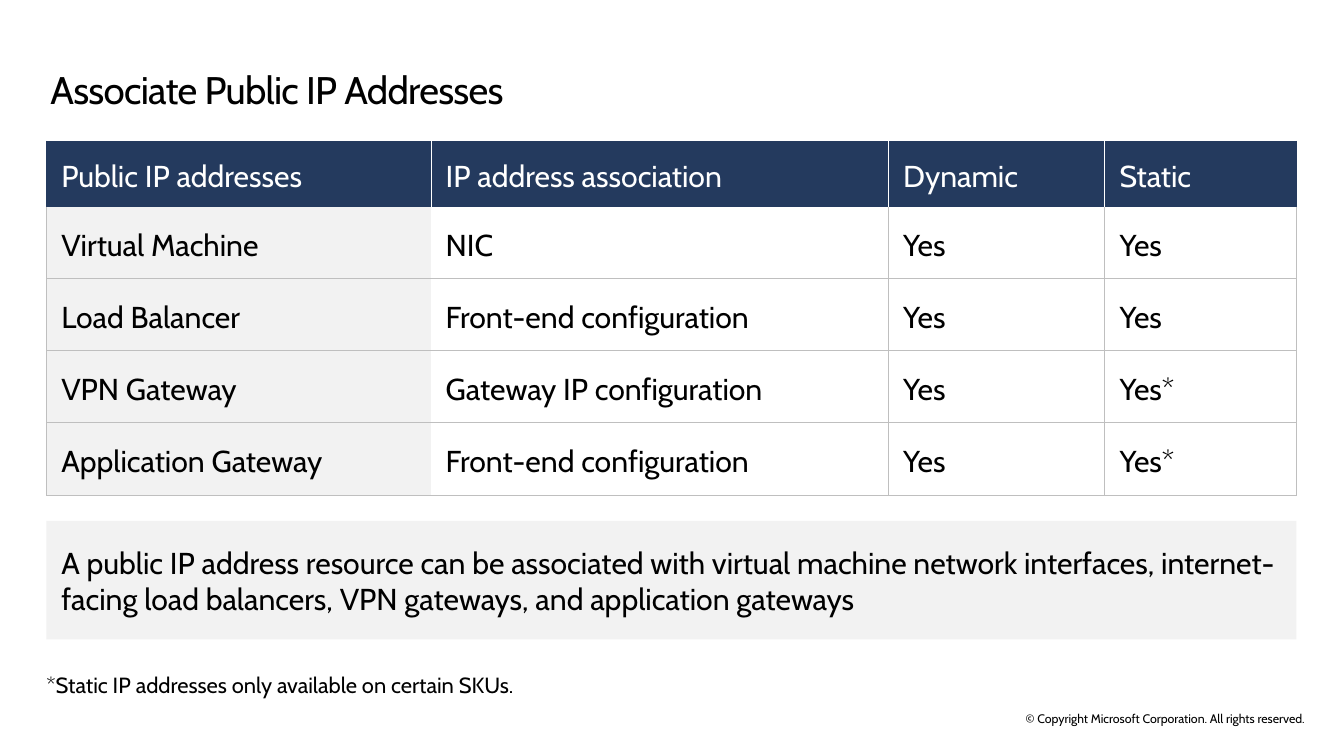
from lxml.etree import SubElement
from pptx import Presentation
from pptx.dml.color import RGBColor
from pptx.enum.shapes import MSO_SHAPE
from pptx.enum.text import MSO_ANCHOR, PP_ALIGN
from pptx.oxml.ns import qn
from pptx.util import Inches, Pt

COLORS = {"ink": "000000", "paper": "FFFFFF", "navy": "243A5E",
          "pale": "F2F2F2", "rule": "BFBFBF"}
FONT = "Cabin"
WIDTH, HEIGHT = Inches(13.6), Inches(7.65)
LEFT = 3.46
COLUMN_SHARES = [28.6, 34.04, 16.1, 14.26]
HEADER_SHARE, ROW_SHARE = 8.63, 9.54
PADDING = (0.15, 0.1)
ASSOCIATIONS = [
    ["Public IP addresses", "IP address association", "Dynamic", "Static"],
    ["Virtual Machine", "NIC", "Yes", "Yes"],
    ["Load Balancer", "Front-end configuration", "Yes", "Yes"],
    ["VPN Gateway", "Gateway IP configuration", "Yes", "Yes*"],
    ["Application Gateway", "Front-end configuration", "Yes", "Yes*"],
]


def color(name):
    return RGBColor.from_string(COLORS[name])


def across(share):
    return round(WIDTH * share / 100)


def down(share):
    return round(HEIGHT * share / 100)


def area(left, top, width, height):
    return across(left), down(top), across(width), down(height)


def pad(target, horizontal, vertical):
    target.margin_left = target.margin_right = Inches(horizontal)
    target.margin_top = target.margin_bottom = Inches(vertical)


def write(frame, words, size, ink="ink", align=PP_ALIGN.LEFT, spacing=None):
    frame.text = words
    paragraph = frame.paragraphs[0]
    paragraph.alignment = align
    paragraph.line_spacing = spacing
    run = paragraph.runs[0]
    run.font.name = FONT
    run.font.size = Pt(size)
    run.font.color.rgb = color(ink)
    return run


def add_title(slide, words):
    title = slide.shapes.title
    title.left, title.top, title.width, title.height = area(3.75, 9.02, 92.72, 5.88)
    frame = title.text_frame
    pad(frame, 0, 0)
    frame.vertical_anchor = MSO_ANCHOR.TOP
    run = write(frame, words, 28, spacing=Pt(32))
    run.font._element.set("spc", "-50")


def add_note(slide, place, words, size, align=PP_ALIGN.LEFT, anchor=MSO_ANCHOR.TOP):
    frame = slide.shapes.add_textbox(*area(*place)).text_frame
    pad(frame, 0, 0)
    frame.word_wrap = align == PP_ALIGN.CENTER
    frame.vertical_anchor = anchor
    write(frame, words, size, align=align)


def add_summary(slide, words):
    panel = slide.shapes.add_shape(MSO_SHAPE.RECTANGLE, *area(LEFT, 68.89, 93.01, 15.69))
    panel.shadow.inherit = False
    panel.fill.solid()
    panel.fill.fore_color.rgb = color("pale")
    panel.line.fill.background()
    frame = panel.text_frame
    pad(frame, *PADDING)
    frame.word_wrap = True
    frame.vertical_anchor = MSO_ANCHOR.MIDDLE
    write(frame, words, 22)


def border_names(row, column, last_column):
    if row == 0:
        return {"L": "paper" if column else "navy",
                "R": "paper" if column < last_column else "navy",
                "T": "navy", "B": None}
    return {"L": None if column == 1 else "rule",
            "R": "rule" if column else None,
            "T": "rule" if row > 1 else None, "B": "rule"}


def draw_borders(cell, names):
    properties = cell._tc.get_or_add_tcPr()
    for side, name in names.items():
        edge = SubElement(properties, qn(f"a:ln{side}"), w=str(Pt(0.5)))
        if name:
            SubElement(SubElement(edge, qn("a:solidFill")), qn("a:srgbClr"), val=COLORS[name])
        else:
            SubElement(edge, qn("a:noFill"))


def fill_cell(cell, name):
    if name:
        cell.fill.solid()
        cell.fill.fore_color.rgb = color(name)
    else:
        cell.fill.background()


def add_associations(slide):
    row_shares = [HEADER_SHARE] + [ROW_SHARE] * (len(ASSOCIATIONS) - 1)
    place = area(LEFT, 18.69, sum(COLUMN_SHARES), sum(row_shares))
    table = slide.shapes.add_table(len(row_shares), len(COLUMN_SHARES), *place).table
    table.first_row = table.horz_banding = False
    for column, share in zip(table.columns, COLUMN_SHARES):
        column.width = across(share)
    for row, share in zip(table.rows, row_shares):
        row.height = down(share)
    for r, entries in enumerate(ASSOCIATIONS):
        for c, words in enumerate(entries):
            cell = table.cell(r, c)
            pad(cell, *PADDING)
            cell.vertical_anchor = MSO_ANCHOR.MIDDLE
            draw_borders(cell, border_names(r, c, len(entries) - 1))
            fill_cell(cell, "navy" if r == 0 else "pale" if c == 0 else None)
            write(cell.text_frame, words, 22, "ink" if r else "paper", spacing=1.15)


def main():
    deck = Presentation()
    deck.slide_width, deck.slide_height = WIDTH, HEIGHT
    slide = deck.slides.add_slide(deck.slide_layouts[5])
    add_note(slide, (73.38, 94.12, 26.62, 1.96),
             "© Copyright Microsoft Corporation. All rights reserved.", 9,
             PP_ALIGN.CENTER, MSO_ANCHOR.MIDDLE)
    add_title(slide, "Associate Public IP Addresses")
    add_associations(slide)
    add_summary(slide, "A public IP address resource can be associated with virtual machine "
                       "network interfaces, internet-facing load balancers, VPN gateways, "
                       "and application gateways")
    add_note(slide, (LEFT, 88.89, 36.54, 3.53),
             "*Static IP addresses only available on certain SKUs.", 16)
    deck.save("out.pptx")


if __name__ == "__main__":
    main()
